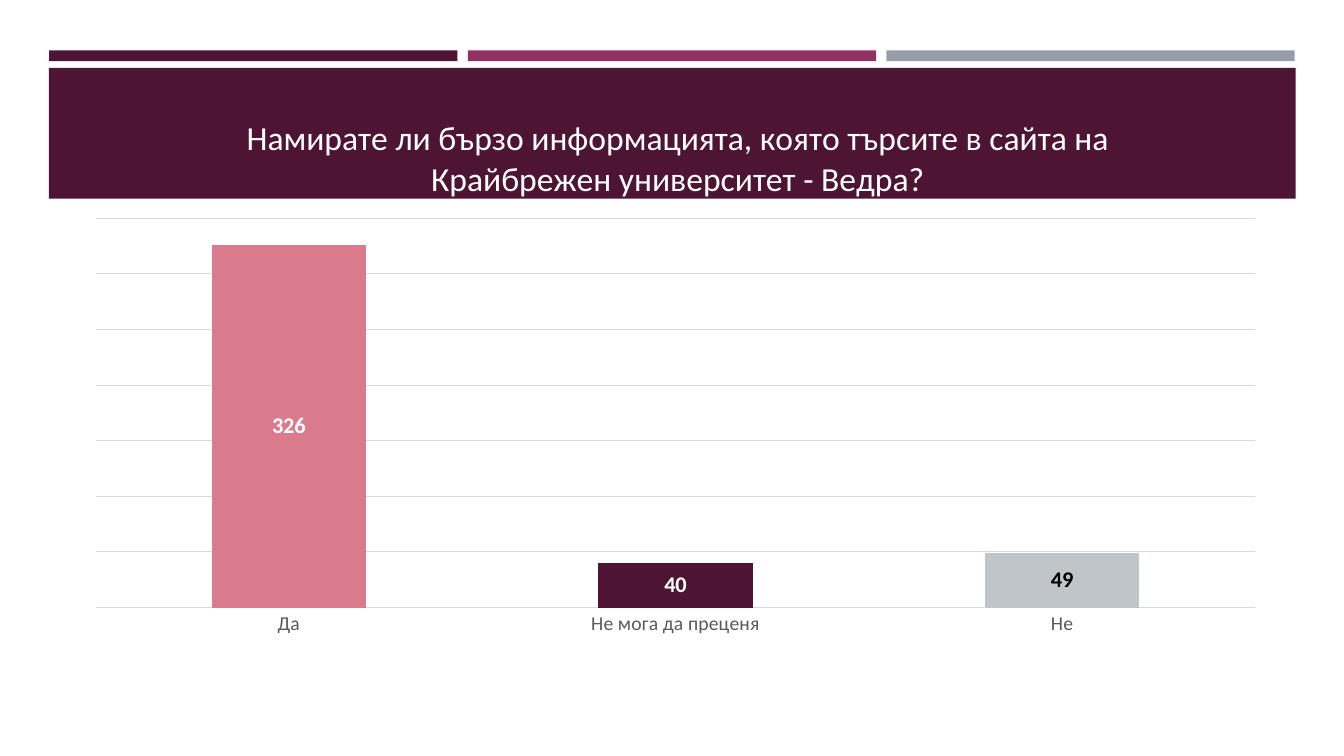
from dataclasses import dataclass

from lxml import etree
from pptx import Presentation
from pptx import util as u
from pptx.chart.data import CategoryChartData
from pptx.dml.color import RGBColor
from pptx.enum import chart as charts, shapes
from pptx.oxml import parse_xml
from pptx.oxml.ns import nsdecls

PLUM, MAGENTA, STEEL = "4D1434", "903163", "969FA7"
ROSE, SILVER, WHITE, BLACK = "DA7B8D", "C0C5CA", "FFFFFF", "000000"
QUESTION = ("Намирате ли бързо информацията, която търсите в сайта на "
            "Крайбрежен университет - Ведра?")
ANSWERS = {"Да": 326, "Не мога да преценя": 40, "Не": 49}


@dataclass
class Bar:
    left: float
    top: float
    width: float
    height: float
    color: str


def rgb(color: str) -> RGBColor:
    return RGBColor.from_string(color)


def paint(fill, color: str) -> None:
    fill.solid()
    fill.fore_color.rgb = rgb(color)


def style_font(font, size: float, color: str, bold: bool = False) -> None:
    font.name = "Calibri"
    font.size = u.Pt(size)
    font.bold = bold
    font.color.rgb = rgb(color)


def draw_bar(page, bar: Bar) -> None:
    box = page.shapes.add_shape(
        shapes.MSO_SHAPE.RECTANGLE,
        u.Cm(bar.left), u.Cm(bar.top), u.Cm(bar.width), u.Cm(bar.height))
    box.shadow.inherit = False
    paint(box.fill, bar.color)
    box.line.fill.background()


def manual_layout(target: str, **places: float) -> etree._Element:
    """Chart layout given as fractions of the chart's size."""
    inner = f'<c:layoutTarget val="{target}"/>' if target else ""
    modes = "".join(f'<c:{axis}Mode val="edge"/>' for axis in "xy")
    sizes = "".join(f'<c:{name} val="{value}"/>' for name, value in places.items())
    return parse_xml(f'<c:layout {nsdecls("c")}><c:manualLayout>'
                     f'{inner}{modes}{sizes}</c:manualLayout></c:layout>')


def place_title(chart) -> None:
    title = chart.chart_title
    title.include_in_layout = False
    para = title.text_frame.paragraphs[0]
    para.text = QUESTION
    style_font(para.font, 24, WHITE)
    element = title._element
    for old in element.findall("c:layout", element.nsmap):
        element.remove(old)
    element.find("c:tx", element.nsmap).addnext(manual_layout("", x=0.14, y=0.02))


def place_plot(chart) -> None:
    area = chart.plots[0]._element.getparent()
    for old in area.findall("c:layout", area.nsmap):
        area.remove(old)
    area.insert(0, manual_layout("inner", x=0.02, y=0.22, w=0.96, h=0.71))


def style_axes(chart) -> None:
    answers = chart.category_axis
    answers.major_tick_mark = charts.XL_TICK_MARK.NONE
    answers.format.line.fill.background()
    style_font(answers.tick_labels.font, 14, "595959")

    counts = chart.value_axis
    counts.visible = False
    counts.minimum_scale, counts.maximum_scale, counts.major_unit = 0, 350, 50
    grid = counts.major_gridlines.format.line
    grid.color.rgb = rgb("D9D9D9")
    grid.width = u.Pt(0.75)


def style_columns(chart) -> None:
    plot = chart.plots[0]
    plot.gap_width, plot.overlap = 150, 100
    plot.vary_by_categories = False
    series = plot.series[0]
    paint(series.format.fill, PLUM)
    for index, color in {0: ROSE, 2: SILVER}.items():
        paint(series.points[index].format.fill, color)
    labels = series.data_labels
    labels.show_value = True
    style_font(labels.font, 16, WHITE, bold=True)
    style_font(series.points[2].data_label.font, 16, BLACK, bold=True)


def add_answer_chart(page) -> None:
    data = CategoryChartData()
    data.categories = list(ANSWERS)
    data.add_series("Series 1", list(ANSWERS.values()))
    chart = page.shapes.add_chart(
        charts.XL_CHART_TYPE.COLUMN_STACKED,
        u.Cm(1.8), u.Cm(2.46), u.Cm(30.45), u.Cm(13.82), data).chart
    chart.has_legend = False
    chart.font.name = "Cabin"
    chart.font.size = u.Pt(10)
    chart.font.color.rgb = rgb(BLACK)
    place_title(chart)
    place_plot(chart)
    style_axes(chart)
    style_columns(chart)


def main() -> None:
    deck = Presentation()
    deck.slide_width, deck.slide_height = u.Cm(33.87), u.Cm(19.05)
    page = deck.slides.add_slide(deck.slide_layouts[6])

    # Three strips above the title band
    for column, color in enumerate((PLUM, MAGENTA, STEEL)):
        draw_bar(page, Bar(1.24 + 10.55 * column, 1.27, 10.29, 0.27, color))
    draw_bar(page, Bar(1.23, 1.71, 31.42, 3.3, PLUM))

    # Chart, whose title lies on the band
    add_answer_chart(page)
    deck.save("out.pptx")


if __name__ == "__main__":
    main()
